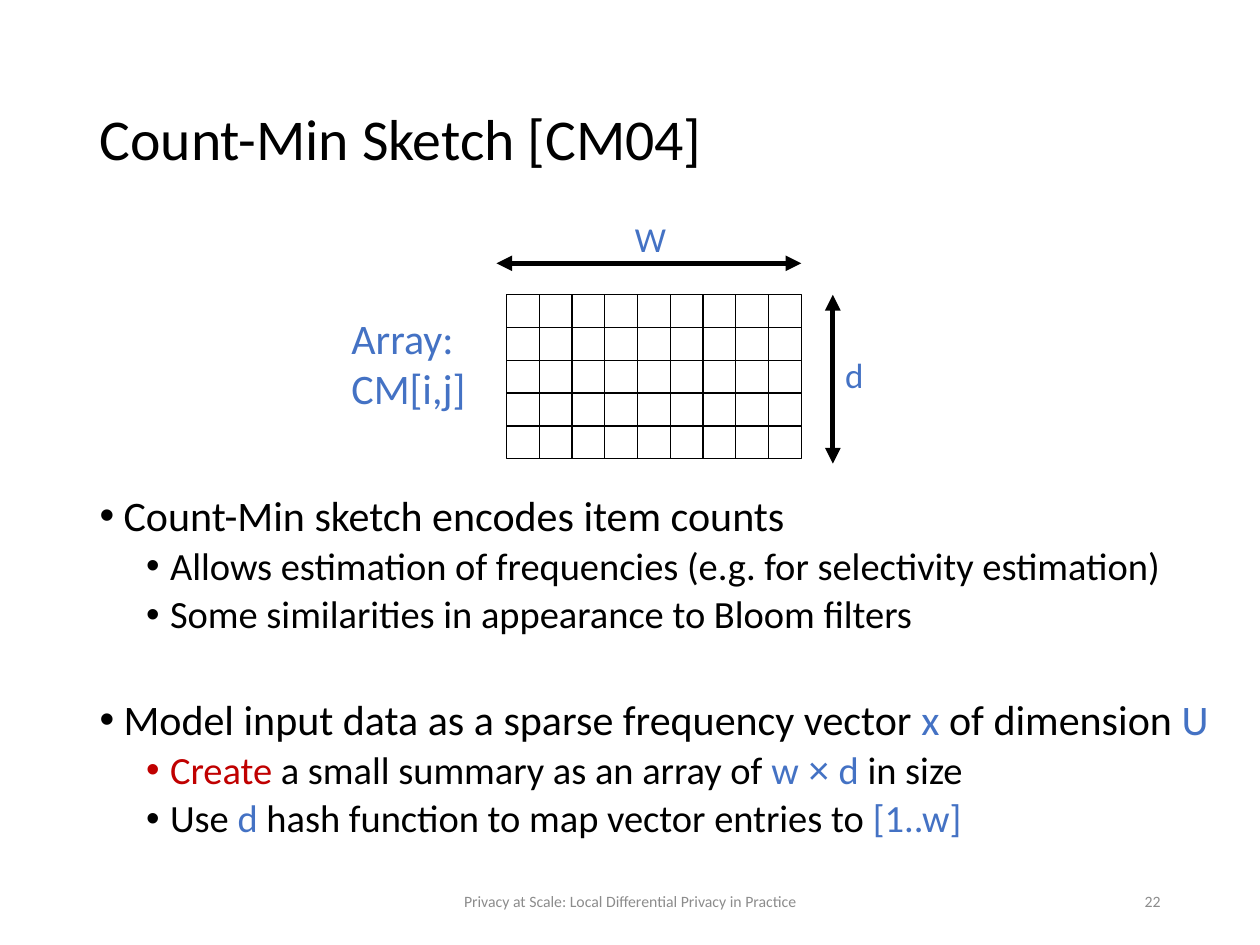
from lxml import etree
from pptx import Presentation
from pptx import util as u
from pptx.dml.color import RGBColor
from pptx.enum import shapes, text
from pptx.oxml import ns

COLORS = {"ink": "000000", "blue": "4472C4", "red": "C00000", "grey": "8C8C8C"}
COLUMNS, ROWS = 100, 75
ARRAY_LEFT, ARRAY_TOP, CELL = 40.2, 23.4, 2.6
ARRAY_COLUMNS, ARRAY_ROWS = 9, 5

# Each item: level, space before in points, spans of (text, color, font)
BULLETS = [
    (0, 0, [("Count-Min sketch encodes item counts",)]),
    (1, 3.8, [("Allows estimation of frequencies (e.g. for selectivity estimation)",)]),
    (1, 3.8, [("Some similarities in appearance to Bloom filters",)]),
    (0, 35.5, [("Model input data as a sparse frequency vector ",), ("x", "blue"),
               (" of dimension ",), ("U", "blue")]),
    (1, 3.8, [("Create", "red"), (" a small summary as an array of ",), ("w ", "blue"),
              ("×", "blue", "Arial"), (" d ", "blue"), ("in size",)]),
    (1, 3.8, [("Use ",), ("d ", "blue"), ("hash function to map vector entries to ",),
              ("[1..w]", "blue")]),
]


def rgb(name):
    return RGBColor.from_string(COLORS[name])


def add_child(parent, tag, **attributes):
    return etree.SubElement(parent, ns.qn(tag), attributes)


class Painter:
    """Holds the style and the current page; lengths are grid columns and rows."""

    font = "Calibri"

    def __init__(self, deck):
        self.page = deck.slides.add_slide(deck.slide_layouts[1])
        self.column = deck.slide_width / COLUMNS
        self.row = deck.slide_height / ROWS

    def place(self, *lengths):
        units = (self.column, self.row) * 2
        return [u.Emu(round(n * unit)) for n, unit in zip(lengths, units)]

    def style(self, para, size, color):
        para.font.name = self.font
        para.font.size = u.Pt(size)
        para.font.color.rgb = rgb(color)

    def move(self, holder, area):
        holder.left, holder.top, holder.width, holder.height = self.place(*area)
        holder.text_frame.auto_size = text.MSO_AUTO_SIZE.NONE

    def title(self, words, area):
        holder = self.page.shapes.title
        self.move(holder, area)
        holder.text_frame.text = words
        holder.text_frame.vertical_anchor = text.MSO_ANCHOR.MIDDLE
        para = holder.text_frame.paragraphs[0]
        para.alignment = text.PP_ALIGN.LEFT
        para.line_spacing = 0.9
        self.style(para, 33, "ink")

    def bullets(self, items, area):
        holder = self.page.placeholders[1]
        self.move(holder, area)
        frame = holder.text_frame
        for index, (level, before, spans) in enumerate(items):
            para = frame.add_paragraph() if index else frame.paragraphs[0]
            para.level = level
            para.line_spacing = 0.9
            para.space_before = u.Pt(before)
            props = para._p.get_or_add_pPr()
            props.set("marL", str(u.Inches((0.19, 0.56)[level])))
            props.set("indent", str(u.Inches(-0.19)))
            add_child(props, "a:buFont", typeface="Arial")
            add_child(props, "a:buChar", char="•")
            self.style(para, (24, 22)[level], "ink")
            for words, *look in spans:
                span = para.add_run()
                span.text = words
                if look:
                    span.font.color.rgb = rgb(look[0])
                if look[1:]:
                    span.font.name = look[1]

    def label(self, words, area, size, color, align=text.PP_ALIGN.LEFT,
              anchor=text.MSO_ANCHOR.TOP, wrap=True):
        box = self.page.shapes.add_textbox(*self.place(*area))
        frame = box.text_frame
        frame.word_wrap = wrap
        frame.vertical_anchor = anchor
        frame.text = words
        para = frame.paragraphs[0]
        para.alignment = align
        self.style(para, size, color)

    def frame(self, area):
        box = self.page.shapes.add_shape(shapes.MSO_SHAPE.RECTANGLE, *self.place(*area))
        box.shadow.inherit = False
        box.fill.background()
        box.line.color.rgb = rgb("ink")
        box.line.width = u.Pt(0.75)

    def line(self, ends, width=0.75, arrows=False):
        rule = self.page.shapes.add_connector(
            shapes.MSO_CONNECTOR.STRAIGHT, *self.place(*ends))
        rule.line.color.rgb = rgb("ink")
        rule.line.width = u.Pt(width)
        if arrows:
            outline = rule.line._get_or_add_ln()
            for tag in ("a:headEnd", "a:tailEnd"):
                add_child(outline, tag, type="triangle")
        add_child(rule._element.spPr, "a:effectLst")

    def array(self):
        right = ARRAY_LEFT + ARRAY_COLUMNS * CELL
        bottom = ARRAY_TOP + ARRAY_ROWS * CELL
        self.frame((ARRAY_LEFT, ARRAY_TOP, right - ARRAY_LEFT, bottom - ARRAY_TOP))
        for step in range(1, ARRAY_COLUMNS):
            x = ARRAY_LEFT + step * CELL
            self.line((x, ARRAY_TOP, x, bottom))
        for step in range(1, ARRAY_ROWS):
            y = ARRAY_TOP + step * CELL
            self.line((ARRAY_LEFT, y, right, y))
        self.line((39.4, 20.9, right, 20.9), 3, arrows=True)
        self.line((66.1, ARRAY_TOP, 66.1, 36.8), 3, arrows=True)


def main():
    deck = Presentation()
    deck.slide_width, deck.slide_height = u.Inches(10), u.Inches(7.5)
    painter = Painter(deck)
    painter.title("Count-Min Sketch [CM04]", (6.9, 4, 93.1, 14.5))
    painter.bullets(BULLETS, (6.9, 38.8, 90.7, 28.8))
    middle = text.MSO_ANCHOR.MIDDLE
    painter.label("Privacy at Scale: Local Differential Privacy in Practice",
                  (33.1, 69.5, 33.8, 4), 9, "grey", text.PP_ALIGN.CENTER, middle)
    painter.label("22", (70.6, 69.5, 22.5, 4), 9, "grey", text.PP_ALIGN.RIGHT, middle)
    painter.array()
    painter.label("W", (49.4, 16.8, 4.6, 4.3), 20, "blue", wrap=False)
    painter.label("d", (66.1, 27.6, 3.5, 4.4), 20, "blue", wrap=False)
    painter.label("Array: CM[i,j]", (26.9, 24.3, 12.5, 9.1), 24, "blue")
    deck.save("out.pptx")


if __name__ == "__main__":
    main()
